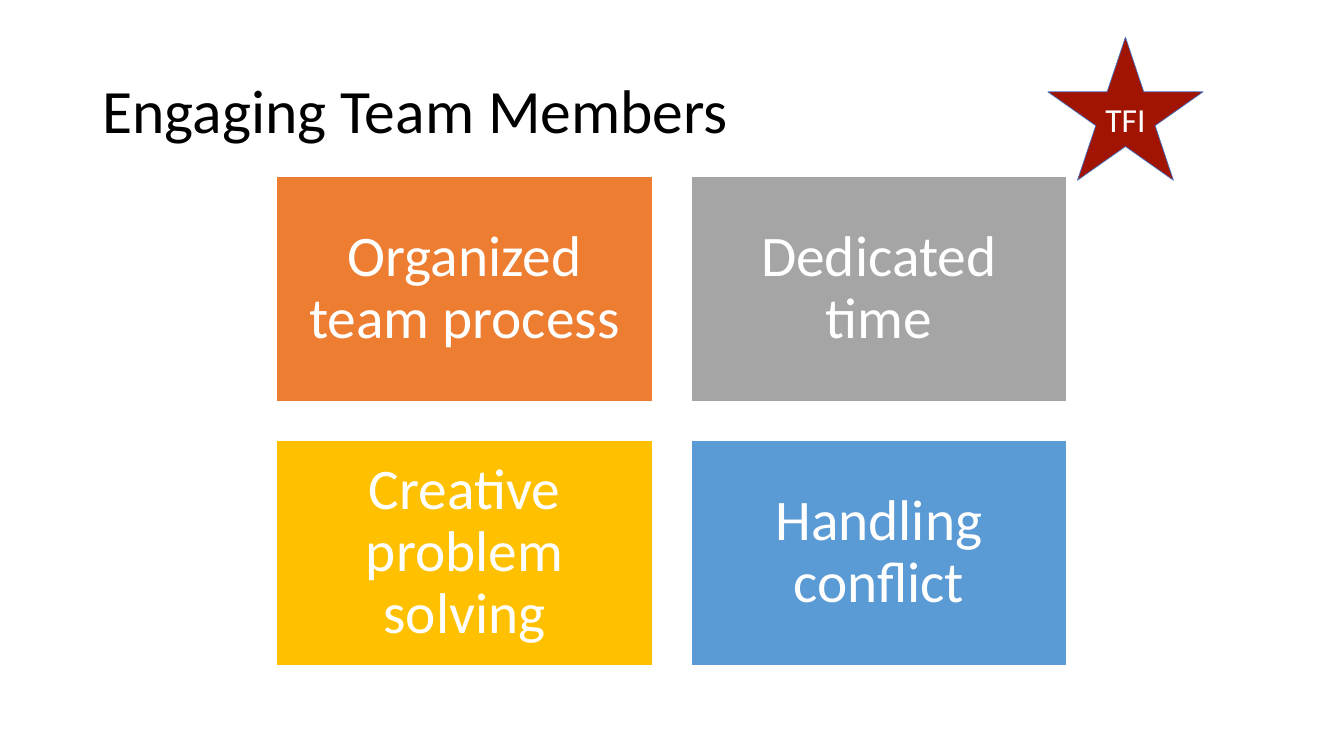
import pptx
import pptx.util
import pptx.dml.color
import pptx.enum.shapes
import pptx.enum.text

Pt = pptx.util.Pt
RGB = pptx.dml.color.RGBColor.from_string
SHAPE = pptx.enum.shapes.MSO_SHAPE
ALIGN = pptx.enum.text.PP_ALIGN
ANCHOR = pptx.enum.text.MSO_ANCHOR

COLORS = {
    "black": "000000", "white": "FFFFFF", "orange": "ED7D31", "gray": "A5A5A5",
    "gold": "FFC000", "blue": "5B9BD5", "red": "A11402", "outline": "4472C4",
}


def add_shape(kind, left, top, width, height, fill, line, weight):
    sp = slide.shapes.add_shape(kind, Pt(left), Pt(top), Pt(width), Pt(height))
    sp.shadow.inherit = False
    sp.fill.solid()
    sp.fill.fore_color.rgb = RGB(COLORS[fill])
    sp.line.color.rgb = RGB(COLORS[line])
    sp.line.width = Pt(weight)
    return sp


def set_text(sp, text, size, color, align, anchor, spacing):
    tf = sp.text_frame
    tf.word_wrap = True
    tf.vertical_anchor = anchor
    p = tf.paragraphs[0]
    p.text = text
    p.alignment = align
    p.line_spacing = spacing
    p.font.name = "Calibri"
    p.font.size = Pt(size)
    p.font.color.rgb = RGB(COLORS[color])
    return tf


prs = pptx.Presentation()
prs.slide_width, prs.slide_height = Pt(960), Pt(540)
slide = prs.slides.add_slide(prs.slide_layouts[6])

title = slide.shapes.add_textbox(Pt(66), Pt(28.75), Pt(828), Pt(104.4))
set_text(title, "Engaging Team Members", 44, "black", ALIGN.LEFT, ANCHOR.MIDDLE, 0.9)

cards = [
    ("Organized team process", "orange"),
    ("Dedicated time", "gray"),
    ("Creative problem solving", "gold"),
    ("Handling conflict", "blue"),
]
card_w, card_h, gap = 269, 161.4, 26.9
for i, (text, fill) in enumerate(cards):
    row, col = divmod(i, 2)
    left = 197.4 + col * (card_w + gap)
    top = 126 + row * (card_h + gap)
    sp = add_shape(SHAPE.RECTANGLE, left, top, card_w, card_h, fill, "white", 1.5)
    tf = set_text(sp, text, 41, "white", ALIGN.CENTER, ANCHOR.MIDDLE, 0.9)
    tf.margin_left = tf.margin_right = tf.margin_top = tf.margin_bottom = Pt(12.3)

add_shape(SHAPE.STAR_5_POINT, 748.5, 26.6, 110.9, 102.2, "red", "outline", 0.5)
label = slide.shapes.add_textbox(Pt(779.8), Pt(67), Pt(48.2), Pt(36.3))
set_text(label, "TFI", 24, "white", ALIGN.CENTER, ANCHOR.TOP, 1.0)

prs.save("out.pptx")
